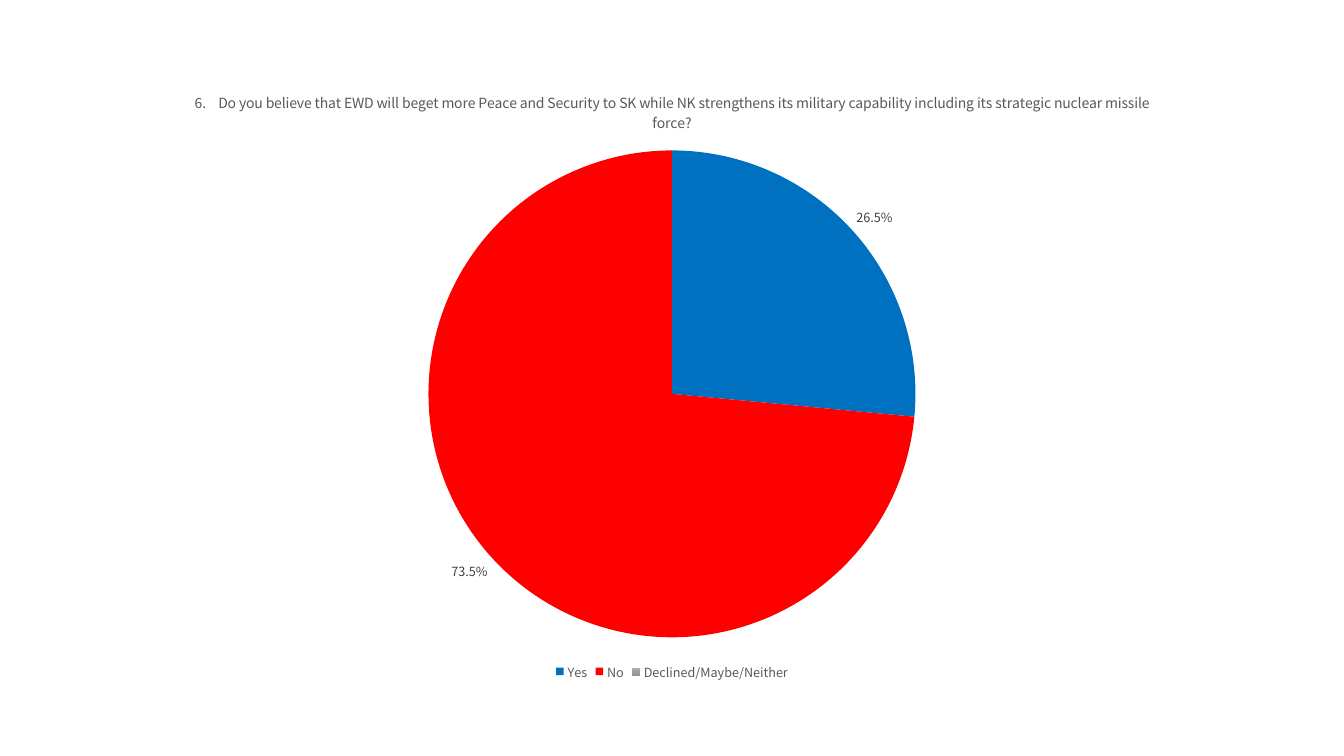
from dataclasses import dataclass

from lxml import etree
from pptx import Presentation
from pptx.chart.data import CategoryChartData
from pptx.dml.color import RGBColor
from pptx.enum.chart import XL_CHART_TYPE, XL_LABEL_POSITION, XL_LEGEND_POSITION
from pptx.oxml.ns import qn
from pptx.util import Inches, Pt


@dataclass(frozen=True)
class Theme:
    font: str = "Noto Sans CJK KR"
    title_size: float = 10
    small_size: float = 9
    muted: str = "595959"
    label: str = "404040"
    yes: str = "0070C0"
    no: str = "FF0000"
    declined: tuple = ("AFAFAF", "939393")


THEME = Theme()
QUESTION = (
    "6.    Do you believe that EWD will beget more Peace and Security to SK "
    "while NK strengthens its military capability including its strategic "
    "nuclear missile force?"
)
ANSWERS = {"Yes": 0.265, "No": 0.735, "Declined/Maybe/Neither": 0}


def format_font(font, *, size, color):
    font.name = THEME.font
    font.size = Pt(size)
    font.bold = False
    font.color.rgb = RGBColor.from_string(color)


def write_title(chart, text, **style):
    chart.has_title = True
    chart.chart_title.include_in_layout = False
    para = chart.chart_title.text_frame.paragraphs[0]
    span = para.add_run()
    span.text = text
    format_font(span.font, **style)


def add_legend(chart, **style):
    chart.has_legend = True
    chart.legend.position = XL_LEGEND_POSITION.BOTTOM
    chart.legend.include_in_layout = False
    format_font(chart.legend.font, **style)


def fill_slice(point, *colors):
    fill = point.format.fill
    if len(colors) == 1:
        fill.solid()
        fill.fore_color.rgb = RGBColor.from_string(colors[0])
    else:
        fill.gradient()
        fill.gradient_angle = 270
        for stop, color in zip(fill.gradient_stops, colors):
            stop.color.rgb = RGBColor.from_string(color)
    point.format.line.fill.background()


def hide_label(labels, index):
    hidden = etree.Element(qn("c:dLbl"))
    etree.SubElement(hidden, qn("c:idx")).set("val", str(index))
    etree.SubElement(hidden, qn("c:delete")).set("val", "1")
    labels._element.insert(0, hidden)


def label_slices(series, **style):
    labels = series.data_labels
    labels.show_value = True
    labels.show_percentage = False
    labels.number_format = "0.0%"
    labels.number_format_is_linked = False
    labels.position = XL_LABEL_POSITION.OUTSIDE_END
    format_font(labels.font, **style)
    for index, value in enumerate(series.values):
        if not value:
            hide_label(labels, index)


def add_pie(page, question, answers, *, left, top, width, height):
    data = CategoryChartData(number_format="0.0%")
    data.categories = list(answers)
    data.add_series(question, list(answers.values()))
    chart = page.shapes.add_chart(
        XL_CHART_TYPE.PIE, Inches(left), Inches(top), Inches(width), Inches(height), data
    ).chart
    chart.font.name = THEME.font
    chart.font.size = Pt(THEME.title_size)
    write_title(chart, question, size=THEME.title_size, color=THEME.muted)
    add_legend(chart, size=THEME.small_size, color=THEME.muted)
    plot = chart.plots[0]
    plot.vary_by_categories = True
    series = plot.series[0]
    for index, colors in enumerate([(THEME.yes,), (THEME.no,), THEME.declined]):
        fill_slice(series.points[index], *colors)
    label_slices(series, size=THEME.small_size, color=THEME.label)


def main():
    deck = Presentation()
    deck.slide_width = Inches(13.33)
    deck.slide_height = Inches(7.5)
    page = deck.slides.add_slide(deck.slide_layouts[6])
    add_pie(page, QUESTION, ANSWERS, left=0.7, top=0.7, width=11.93, height=6.09)
    deck.save("out.pptx")


if __name__ == "__main__":
    main()
